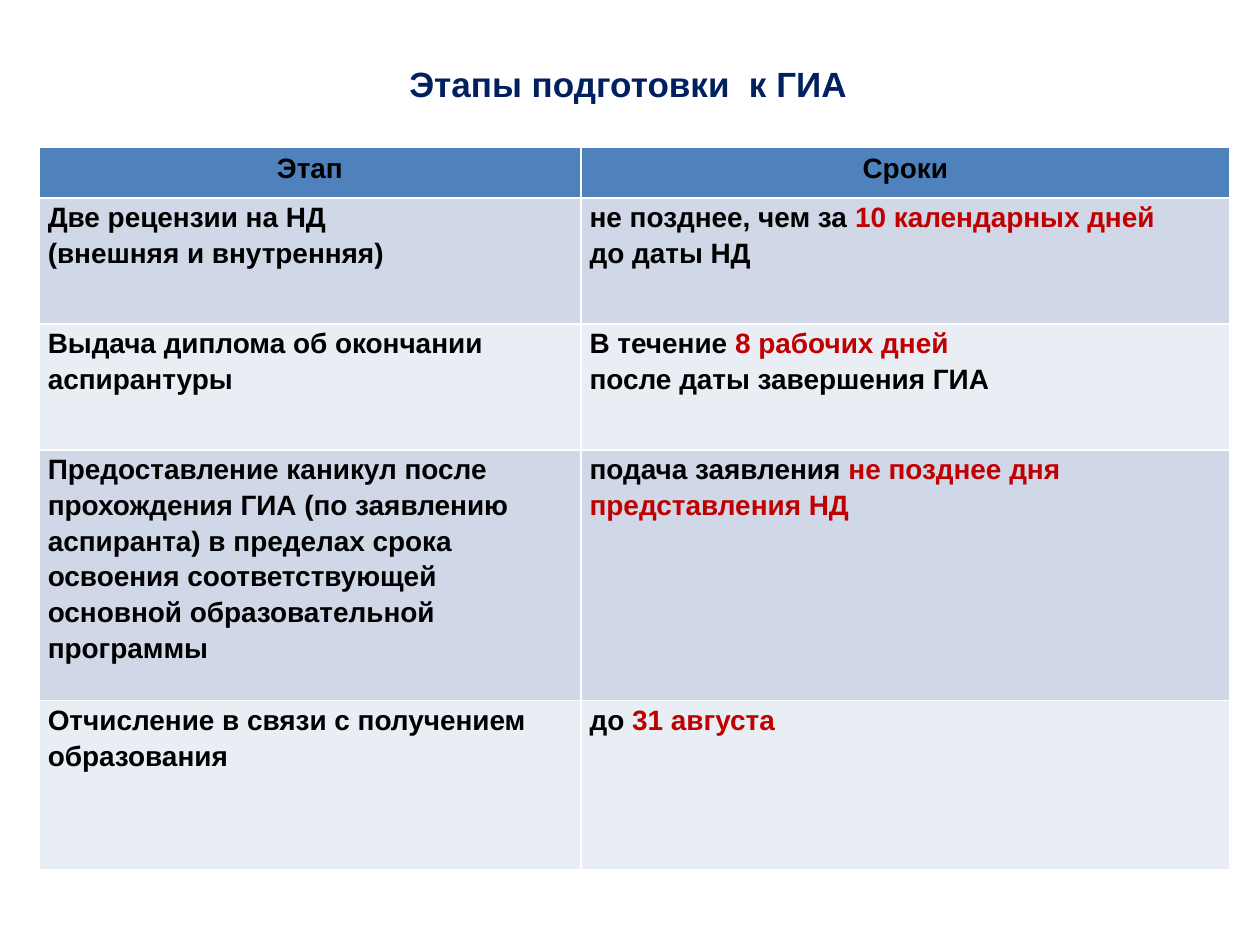
from pptx import Presentation
from pptx.dml.color import RGBColor
from pptx.enum.text import MSO_ANCHOR, PP_ALIGN
from pptx.util import Inches, Pt

COLORS = {
    "title": "002060",
    "text": "000000",
    "accent": "C00000",
    "header": "4F81BD",
    "band_dark": "D0D8E8",
    "band_light": "E9EDF4",
}
FONT = "Arial"

# Content: a cell is a list of paragraphs, a paragraph a list of (text, colour);
# "\n" marks a line break
TITLE = "Этапы подготовки  к ГИА"
HEADERS = ["Этап", "Сроки"]
STAGES = [
    ([[("Две рецензии на НД", "text")], [("(внешняя и внутренняя)", "text")]],
     [[("не позднее, чем за ", "text"), ("10 календарных дней \n", "accent"),
       ("до даты НД", "text")]]),
    ([[("Выдача диплома об окончании аспирантуры", "text")]],
     [[("В течение ", "text"), ("8 рабочих дней \n", "accent"),
       ("после даты завершения ГИА", "text")]]),
    ([[("Предоставление каникул после прохождения ГИА (по заявлению аспиранта) "
        "в пределах срока освоения соответствующей основной образовательной "
        "программы", "text")]],
     [[("подача заявления ", "text"),
       ("не позднее дня представления НД", "accent")]]),
    ([[("Отчисление в связи с получением образования", "text")]],
     [[("до ", "text"), ("31 августа", "accent")]]),
]
COL_WIDTHS = [4.3, 5.15]
ROW_HEIGHTS = [0.4, 1, 1, 1.99, 1.34]


def add_text(p, text, color, size):
    for i, line in enumerate(text.split("\n")):
        if i:
            p.add_line_break()
        if line:
            r = p.add_run()
            r.text = line
            r.font.name = FONT
            r.font.size = Pt(size)
            r.font.bold = True
            r.font.color.rgb = RGBColor.from_string(COLORS[color])


def fill_cell(cell, paragraphs, fill, align=None, spacing=None):
    cell.fill.solid()
    cell.fill.fore_color.rgb = RGBColor.from_string(COLORS[fill])
    tf = cell.text_frame
    for i, runs in enumerate(paragraphs):
        p = tf.add_paragraph() if i else tf.paragraphs[0]
        p.alignment = align
        p.line_spacing = spacing
        for text, color in runs:
            add_text(p, text, color, 16)


prs = Presentation()
prs.slide_width, prs.slide_height = Inches(10), Inches(7.5)
s = prs.slides.add_slide(prs.slide_layouts[5])

# Title
title = s.shapes.title
title.left, title.top = Inches(0.47), Inches(0.3)
title.width, title.height = Inches(9.03), Inches(0.72)
tf = title.text_frame
tf.vertical_anchor = MSO_ANCHOR.MIDDLE
tf.paragraphs[0].alignment = PP_ALIGN.CENTER
add_text(tf.paragraphs[0], TITLE, "title", 20)

# Table grid
table = s.shapes.add_table(
    len(ROW_HEIGHTS), len(COL_WIDTHS), Inches(0.31), Inches(1.17),
    Inches(sum(COL_WIDTHS)), Inches(sum(ROW_HEIGHTS))).table
for col, width in zip(table.columns, COL_WIDTHS):
    col.width = Inches(width)
for row, height in zip(table.rows, ROW_HEIGHTS):
    row.height = Inches(height)

# Header row
for c, text in enumerate(HEADERS):
    fill_cell(table.cell(0, c), [[(text, "text")]], "header", PP_ALIGN.CENTER)

# Stage rows
for r, stage in enumerate(STAGES, start=1):
    for c, paragraphs in enumerate(stage):
        cell = table.cell(r, c)
        cell.margin_left = cell.margin_right = Inches(0.07)
        cell.margin_top = cell.margin_bottom = 0
        fill_cell(cell, paragraphs, "band_dark" if r % 2 else "band_light",
                  spacing=1.15)

prs.save("out.pptx")
